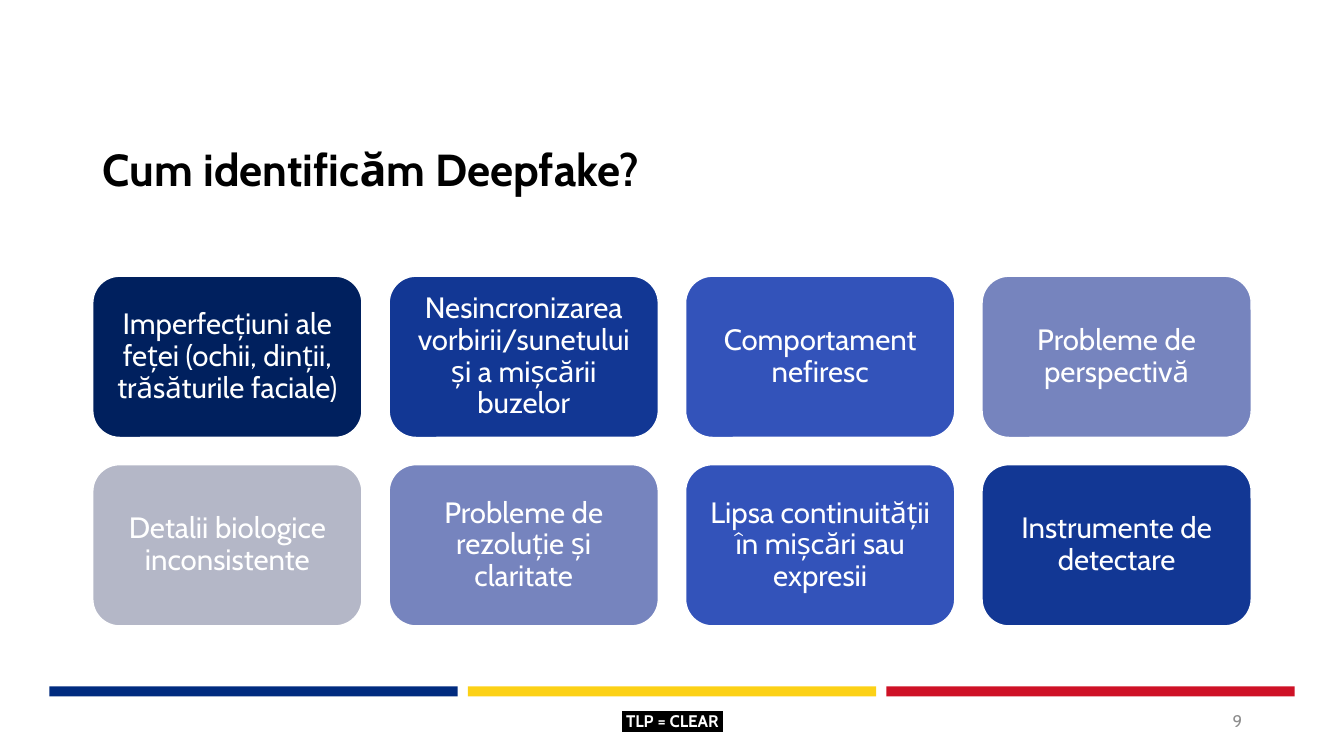
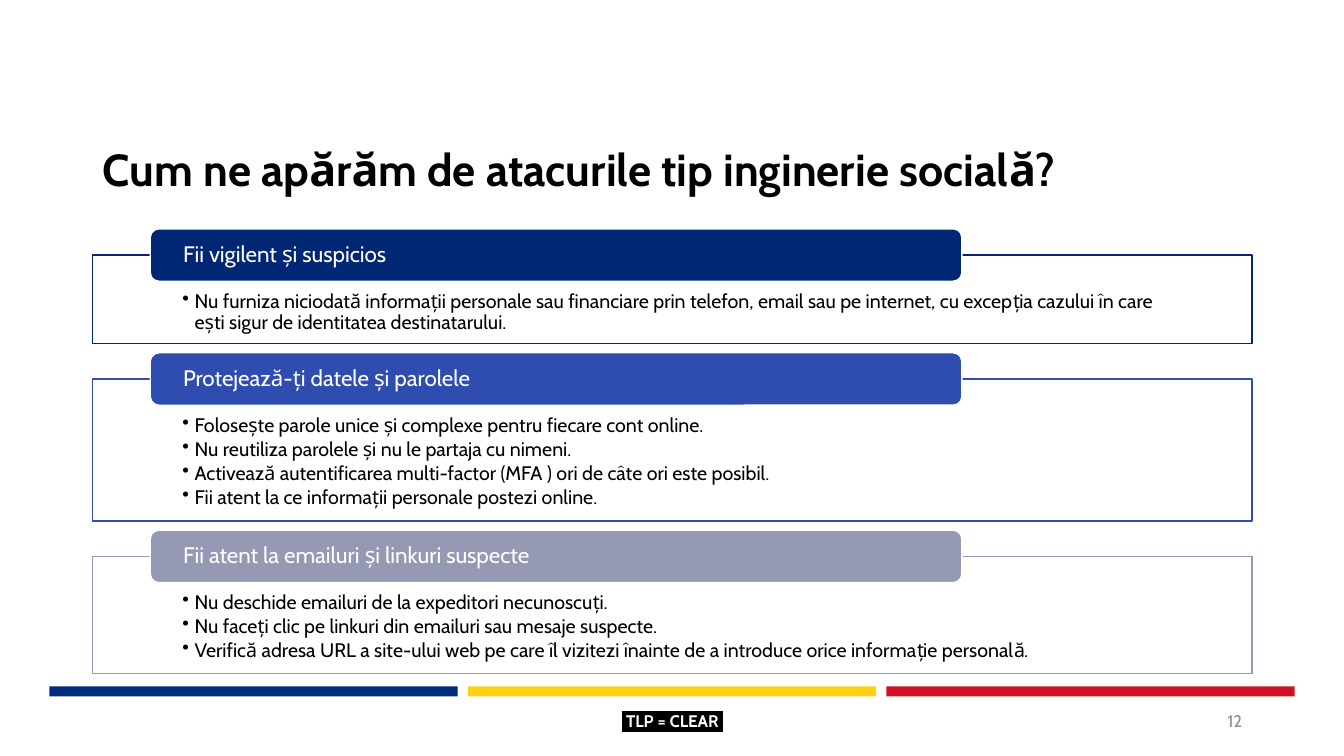
from lxml.etree import SubElement
from pptx import Presentation
from pptx.dml.color import RGBColor
from pptx.enum.shapes import MSO_SHAPE
from pptx.enum.text import MSO_ANCHOR, MSO_AUTO_SIZE, PP_ALIGN
from pptx.oxml.ns import qn
from pptx.util import Inches, Pt

FONT = "Cabin"
COLORS = {
    "black": "000000", "white": "FFFFFF", "grey": "8C8C8C",
    "band_blue": "002B7F", "band_yellow": "FCD116", "band_red": "CE1126",
    "card_navy": "00205E", "card_blue": "123794", "card_royal": "3353BA",
    "card_lavender": "7684BE", "card_grey": "B4B7C7",
    "panel_navy": "002773", "panel_royal": "2E4DAF", "panel_grey": "9599B3",
}
LEFT, CONTENT_WIDTH = 0.92, 11.5
FOOTER_TOP, FOOTER_HEIGHT = 6.95, 0.4
CARD_COLUMNS = 4
CARD_WIDTH, CARD_HEIGHT, CARD_GAP, CARDS_TOP = 2.67, 1.6, 0.27, 2.74
PANELS_TOP, PANEL_GAP = 2.53, 0.35

CARDS = [
    ("Imperfecțiuni ale feței (ochii, dinții, trăsăturile faciale)", "card_navy"),
    ("Nesincronizarea vorbirii/sunetului și a mișcării buzelor", "card_blue"),
    ("Comportament nefiresc", "card_royal"),
    ("Probleme de perspectivă", "card_lavender"),
    ("Detalii biologice inconsistente", "card_grey"),
    ("Probleme de rezoluție și claritate", "card_lavender"),
    ("Lipsa continuității în mișcări sau expresii", "card_royal"),
    ("Instrumente de detectare", "card_blue"),
]
PANELS = [
    ("Fii vigilent și suspicios", "panel_navy", 0.88, [
        "Nu furniza niciodată informații personale sau financiare prin telefon, email sau "
        "pe internet, cu excepția cazului în care ești sigur de identitatea destinatarului.",
    ]),
    ("Protejează-ți datele și parolele", "panel_royal", 1.41, [
        "Folosește parole unice și complexe pentru fiecare cont online.",
        "Nu reutiliza parolele și nu le partaja cu nimeni.",
        "Activează autentificarea multi-factor (MFA ) ori de câte ori este posibil.",
        "Fii atent la ce informații personale postezi online.",
    ]),
    ("Fii atent la emailuri și linkuri suspecte", "panel_grey", 1.16, [
        "Nu deschide emailuri de la expeditori necunoscuți.",
        "Nu faceți clic pe linkuri din emailuri sau mesaje suspecte.",
        "Verifică adresa URL a site-ului web pe care îl vizitezi înainte de a introduce "
        "orice informație personală.",
    ]),
]


def color(name):
    return RGBColor.from_string(COLORS[name])


def apply_format(target, values):
    for name, value in values.items():
        setattr(target, name, value)


def box(left, top, width, height):
    return [Inches(length) for length in (left, top, width, height)]


def set_text(shape, lines, size, color_name, bold=False, insets=(0.1, 0.05),
             anchor=MSO_ANCHOR.MIDDLE, bullets=False, **paragraph_format):
    """Fill a shape with one paragraph per line; insets are horizontal and vertical."""
    frame = shape.text_frame
    frame.text = "\n".join(lines)
    horizontal, vertical = (Inches(inset) for inset in insets)
    apply_format(frame, {
        "word_wrap": True, "auto_size": MSO_AUTO_SIZE.NONE, "vertical_anchor": anchor,
        "margin_left": horizontal, "margin_right": horizontal,
        "margin_top": vertical, "margin_bottom": vertical,
    })
    for paragraph in frame.paragraphs:
        if bullets:
            add_bullet(paragraph)
        apply_format(paragraph, {"alignment": PP_ALIGN.LEFT, **paragraph_format})
        font = paragraph.runs[0].font
        apply_format(font, {"name": FONT, "size": Pt(size), "bold": bold})
        font.color.rgb = color(color_name)


def add_bullet(paragraph):
    properties = paragraph._p.get_or_add_pPr()
    indent = Inches(0.12)
    properties.set("marL", str(indent))
    properties.set("indent", str(-indent))
    SubElement(properties, qn("a:buChar"), char="•")


def add_highlight(run, color_name):
    properties = run._r.get_or_add_rPr()
    highlight = SubElement(properties, qn("a:highlight"))
    SubElement(highlight, qn("a:srgbClr"), val=COLORS[color_name])
    properties.find(qn("a:latin")).addprevious(highlight)


def add_filled_shape(slide, kind, position, fill, line=None):
    shape = slide.shapes.add_shape(kind, *box(*position))
    shape.shadow.inherit = False
    shape.fill.solid()
    shape.fill.fore_color.rgb = color(fill)
    if line:
        shape.line.color.rgb = color(line)
        shape.line.width = Pt(1)
    else:
        shape.line.fill.background()
    return shape


def add_master_bands(slide, master):
    """Draw the tricolour bands and move them to the master, so every slide shows them."""
    for index, name in enumerate(("band_blue", "band_yellow", "band_red")):
        position = (0.49 + index * 4.15, 6.81, 4.05, 0.1)
        band = add_filled_shape(slide, MSO_SHAPE.RECTANGLE, position, name)
        band.element.nvSpPr.cNvPr.set("id", str(101 + index))
        master.element.cSld.spTree.append(band.element)


def add_text_box(slide, position, text, **text_format):
    text_box = slide.shapes.add_textbox(*box(*position))
    set_text(text_box, [text], 12, **text_format)
    return text_box


def add_base_slide(presentation, title, number):
    slide = presentation.slides.add_slide(presentation.slide_layouts[5])
    heading = slide.shapes.title
    left, top, width, height = box(LEFT, 1.48, CONTENT_WIDTH, 0.45)
    apply_format(heading, {"left": left, "top": top, "width": width, "height": height})
    set_text(heading, [title], 32, "black", bold=True, line_spacing=0.9)
    marking = add_text_box(slide, (4.42, FOOTER_TOP, 4.5, FOOTER_HEIGHT), " TLP = CLEAR ",
                           color_name="white", bold=True, alignment=PP_ALIGN.CENTER)
    add_highlight(marking.text_frame.paragraphs[0].runs[0], "black")
    add_text_box(slide, (9.42, FOOTER_TOP, 3, FOOTER_HEIGHT), str(number),
                 color_name="grey", alignment=PP_ALIGN.RIGHT)
    return slide


def add_cards(slide):
    for index, (text, fill) in enumerate(CARDS):
        row, column = divmod(index, CARD_COLUMNS)
        position = (LEFT + column * (CARD_WIDTH + CARD_GAP),
                    CARDS_TOP + row * (CARD_HEIGHT + CARD_GAP), CARD_WIDTH, CARD_HEIGHT)
        card = add_filled_shape(slide, MSO_SHAPE.FLOWCHART_ALTERNATE_PROCESS,
                                position, fill, "white")
        set_text(card, [text], 21, "white", insets=(0.09, 0.09),
                 alignment=PP_ALIGN.CENTER, line_spacing=0.9)


def add_panels(slide):
    top = PANELS_TOP
    for heading, accent, height, items in PANELS:
        panel = add_filled_shape(slide, MSO_SHAPE.RECTANGLE,
                                 (LEFT, top, CONTENT_WIDTH, height), "white", accent)
        set_text(panel, items, 14, "black", insets=(0.89, 0.36), anchor=MSO_ANCHOR.TOP,
                 bullets=True, line_spacing=0.9, space_after=Pt(2.1))
        panel.text_frame.margin_bottom = Inches(0.11)
        tab = add_filled_shape(slide, MSO_SHAPE.ROUNDED_RECTANGLE,
                               (1.49, top - 0.26, 8.05, 0.52), accent, "white")
        set_text(tab, [heading], 16, "white", insets=(0.3, 0), line_spacing=0.9)
        top += height + PANEL_GAP


def main():
    presentation = Presentation()
    apply_format(presentation, {"slide_width": Inches(13.33), "slide_height": Inches(7.5)})
    deepfake_slide = add_base_slide(presentation, "Cum identificăm Deepfake?", 9)
    add_master_bands(deepfake_slide, presentation.slide_master)
    add_cards(deepfake_slide)
    defence_slide = add_base_slide(
        presentation, "Cum ne apărăm de atacurile tip inginerie socială?", 12)
    add_panels(defence_slide)
    presentation.save("out.pptx")


if __name__ == "__main__":
    main()
